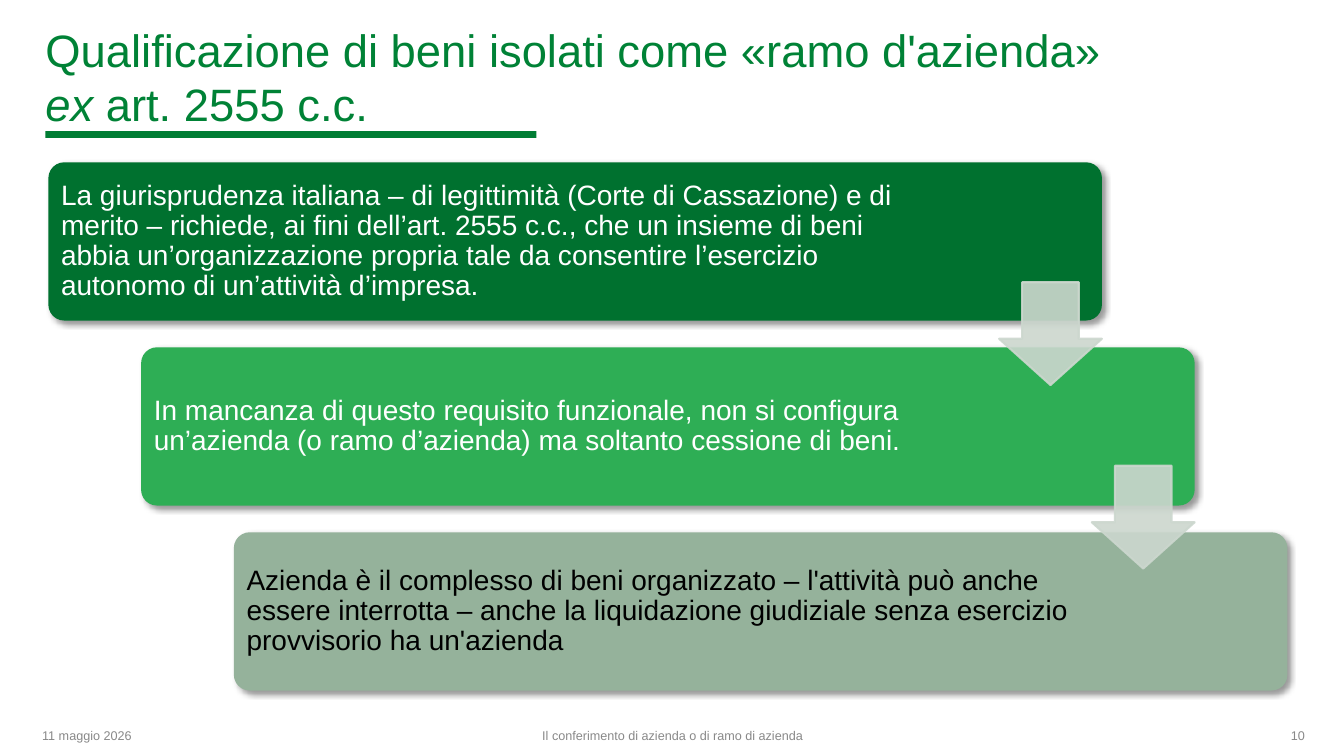
from lxml.etree import SubElement
from pptx import Presentation
from pptx.dml.color import RGBColor
from pptx.enum.shapes import MSO_SHAPE as Shape
from pptx.enum.text import MSO_ANCHOR as Anchor, MSO_AUTO_SIZE as AutoSize, PP_ALIGN as Align
from pptx.oxml.ns import qn
from pptx.util import Inches, Pt

TITLE_GREEN = RGBColor(0x00, 0x82, 0x36)
RULE_GREEN = RGBColor(0x00, 0x7D, 0x34)
DARK_GREEN = RGBColor(0x00, 0x71, 0x2F)
BRIGHT_GREEN = RGBColor(0x2E, 0xAE, 0x55)
SAGE = RGBColor(0x95, 0xB2, 0x9B)
PALE_SAGE = RGBColor(0xCC, 0xD7, 0xCE)
GREY = RGBColor(0x89, 0x89, 0x89)
WHITE = RGBColor(0xFF, 0xFF, 0xFF)
BLACK = RGBColor(0x00, 0x00, 0x00)

CARDS = [
    ("La giurisprudenza italiana – di legittimità (Corte di Cassazione) e di merito – richiede, "
     "ai fini dell’art. 2555 c.c., che un insieme di beni abbia un’organizzazione propria tale da "
     "consentire l’esercizio autonomo di un’attività d’impresa.", DARK_GREEN, WHITE, 12.53),
    ("In mancanza di questo requisito funzionale, non si configura un’azienda (o ramo d’azienda) "
     "ma soltanto cessione di beni.", BRIGHT_GREEN, WHITE, 15.08),
    ("Azienda è il complesso di beni organizzato – l'attività può anche essere interrotta – anche "
     "la liquidazione giudiziale senza esercizio provvisorio ha un'azienda", SAGE, BLACK, 15.08),
]
FOOTERS = [
    ("11 maggio 2026", 2.4, 22.5, Align.LEFT),
    ("Il conferimento di azienda o di ramo di azienda", 33.16, 33.76, Align.CENTER),
    ("10", 75.32, 22.5, Align.RIGHT),
]


def apply(target, formats):
    """Set every attribute named in the format dict."""
    for name, value in formats.items():
        setattr(target, name, value)


class Deck:
    """Hold the style and current slide; lengths are percentages of the slide."""

    def __init__(self):
        """Open a title-only slide."""
        self.deck = Presentation()
        apply(self.deck, {"slide_width": Inches(13.33), "slide_height": Inches(7.5)})
        self.slide = self.deck.slides.add_slide(self.deck.slide_layouts[5])

    def across(self, share):
        """Convert a share of the slide width."""
        return int(self.deck.slide_width * share / 100)

    def down(self, share):
        """Convert a share of the slide height."""
        return int(self.deck.slide_height * share / 100)

    def place(self, left, top, width, height):
        """Convert a box given in shares."""
        return self.across(left), self.down(top), self.across(width), self.down(height)

    def style(self, run, size, color, italic=False):
        """Format one run of text."""
        apply(run.font, {"name": "Arial", "size": Pt(size), "italic": italic})
        run.font.color.rgb = color

    def title(self, box, lines):
        """Fill the title from lines of (text, italic) pairs."""
        heading = self.slide.shapes.title
        apply(heading, dict(zip(("left", "top", "width", "height"), self.place(*box))))
        apply(heading.text_frame, {"word_wrap": True, "auto_size": AutoSize.NONE,
                                   "vertical_anchor": Anchor.BOTTOM})
        paragraph = heading.text_frame.paragraphs[0]
        paragraph.alignment = Align.LEFT
        for number, line in enumerate(lines):
            if number:
                paragraph.add_line_break()
            for words, italic in line:
                run = paragraph.add_run()
                run.text = words
                self.style(run, 32.4, TITLE_GREEN, italic)

    def block(self, kind, box, color, adjustments=()):
        """Draw a flat preset shape."""
        block = self.slide.shapes.add_shape(kind, *self.place(*box))
        block.shadow.inherit = False
        block.fill.solid()
        block.fill.fore_color.rgb = color
        block.line.fill.background()
        for index, value in enumerate(adjustments):
            block.adjustments[index] = value
        return block

    def fill_text(self, frame, words, size, color, frame_formats, paragraph_formats):
        """Fill a frame with one formatted paragraph."""
        apply(frame, {"word_wrap": True, "vertical_anchor": Anchor.MIDDLE, **frame_formats})
        paragraph = frame.paragraphs[0]
        apply(paragraph, paragraph_formats)
        run = paragraph.add_run()
        run.text = words
        self.style(run, size, color)

    def card(self, box, words, color, ink, right_inset):
        """Draw a rounded card with its text and a soft shadow."""
        card = self.block(Shape.ROUNDED_RECTANGLE, box, color, [0.1])
        insets = {"margin_left": self.across(0.6), "margin_right": self.across(right_inset),
                  "margin_top": self.down(1.07), "margin_bottom": self.down(1.07)}
        self.fill_text(card.text_frame, words, 20, ink, insets,
                       {"alignment": Align.LEFT, "line_spacing": 0.9, "space_after": Pt(7)})
        effects = card._element.spPr.find(qn("a:effectLst"))
        shadow = SubElement(effects, qn("a:outerShdw"), blurRad=str(Pt(4)), dist=str(Pt(3)),
                            dir=str(45 * 60000), algn="ctr", rotWithShape="0")
        tint = SubElement(shadow, qn("a:srgbClr"), val=str(BLACK))
        SubElement(tint, qn("a:alpha"), val="40000")

    def arrow(self, box):
        """Draw a translucent arrow pointing down."""
        arrow = self.block(Shape.DOWN_ARROW, box, PALE_SAGE, [0.55, 0.45])
        arrow.line.color.rgb = PALE_SAGE
        arrow.line.width = Pt(1.5)
        for tint in arrow._element.spPr.iter(qn("a:srgbClr")):
            SubElement(tint, qn("a:alpha"), val="90000")

    def footer(self, words, left, width, alignment):
        """Add one footer text."""
        footer = self.slide.shapes.add_textbox(*self.place(left, 94.67, width, 5.33))
        self.fill_text(footer.text_frame, words, 9, GREY, {}, {"alignment": alignment})


def main():
    """Build and save the slide."""
    deck = Deck()
    deck.block(Shape.RECTANGLE, (3.38, 17.33, 36.53, 0.93), RULE_GREEN)
    deck.title((2.63, 4.53, 96.4, 13.47), [
        [("Qualificazione di beni isolati come «ramo d'azienda»", False)],
        [("ex", True), (" art. 2555 c.c.", False)],
    ])
    for footer in FOOTERS:
        deck.footer(*footer)
    for step, card in enumerate(CARDS):
        deck.card((3.6 + 6.9 * step, 21.47 + 24.47 * step, 78.39, 20.93), *card)
    for step in range(len(CARDS) - 1):
        deck.arrow((74.34 + 6.9 * step, 37.33 + 24.27 * step, 7.65, 13.6))
    deck.deck.save("out.pptx")


if __name__ == "__main__":
    main()
